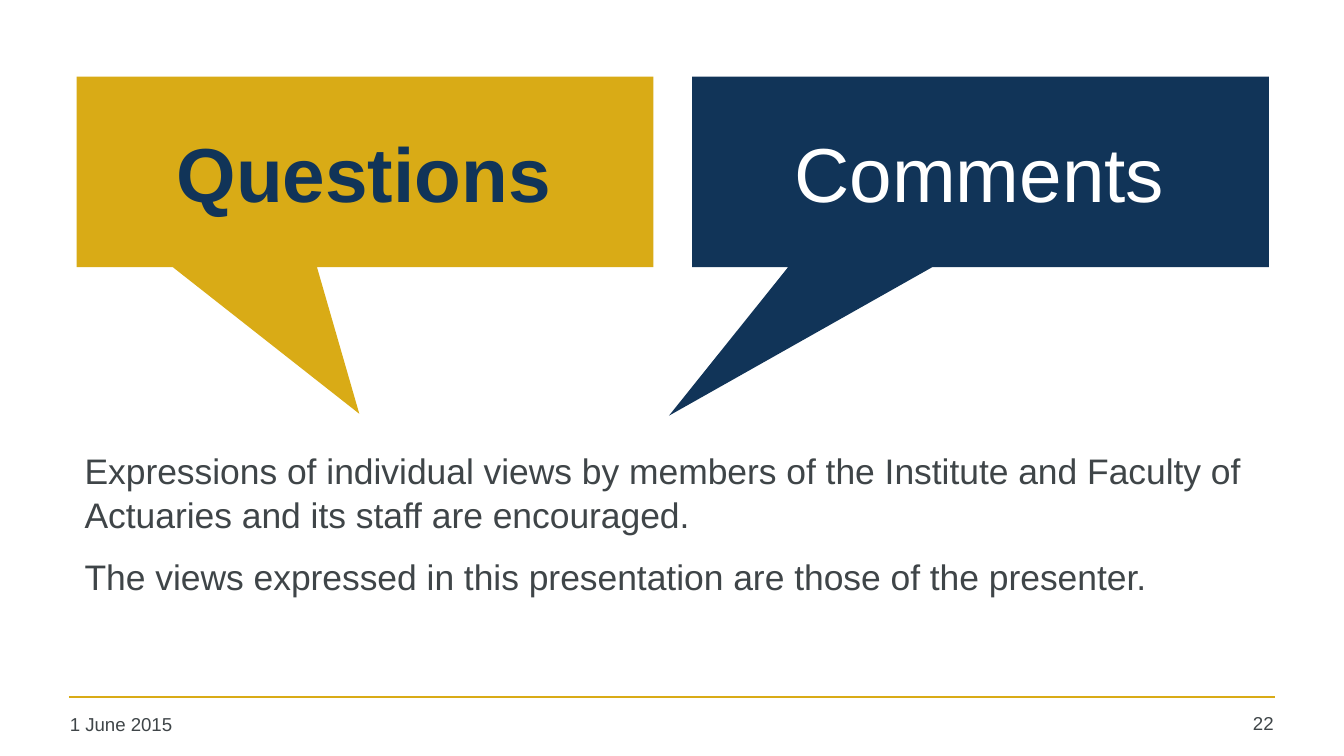
from lxml import etree
from pptx import Presentation
from pptx import util as u
from pptx.dml.color import RGBColor
from pptx.enum import shapes, text
from pptx.oxml import ns

HUES = {"gold": "D9AB16", "navy": "113458", "grey": "3F4548", "white": "FFFFFF"}


def hue(name):
    return RGBColor.from_string(HUES[name])


def write(box, lines, size, color, align=text.PP_ALIGN.LEFT, bold=False):
    """Put one paragraph per line into a text box and format it."""
    frame = box.text_frame
    frame.word_wrap = True
    frame.margin_left = frame.margin_right = u.Cm(0.23)
    frame.margin_top = frame.margin_bottom = u.Cm(0.11)
    frame.text = "\n".join(lines)
    for par in frame.paragraphs:
        par.alignment = align
        for run in par.runs:
            run.font.name = "Arial"
            run.font.size = u.Pt(size)
            run.font.bold = bold
            run.font.color.rgb = hue(color)
    return frame


deck = Presentation()
deck.slide_width, deck.slide_height = u.Cm(25.4), u.Cm(14.29)
slide = deck.slides.add_slide(deck.slide_layouts[6])
items = slide.shapes

# Footer
rule = items.add_connector(shapes.MSO_CONNECTOR.STRAIGHT,
                           u.Cm(1.3), u.Cm(13.18), u.Cm(24.1), u.Cm(13.18))
rule.line.color.rgb = hue("gold")
rule.line.width = u.Pt(1)
etree.SubElement(rule._element.spPr, ns.qn("a:effectLst"))

date = items.add_textbox(u.Cm(1.09), u.Cm(13.36), u.Cm(5.6), u.Cm(0.7))
write(date, ["1 June 2015"], 10, "grey")
page = items.add_textbox(u.Cm(22.5), u.Cm(13.34), u.Cm(1.8), u.Cm(0.7))
write(page, ["22"], 10, "grey", text.PP_ALIGN.RIGHT)

# Disclaimer
body = items.add_textbox(u.Cm(1.37), u.Cm(8.33), u.Cm(23.34), u.Cm(4.9))
frame = write(body, [
    "Expressions of individual views by members of the Institute and Faculty "
    "of Actuaries and its staff are encouraged.",
    "The views expressed in this presentation are those of the presenter.",
], 19, "grey")
for par in frame.paragraphs:
    par.line_spacing = 1.05
frame.paragraphs[1].space_before = u.Pt(9)

# Speech bubbles: word, fill, text colour, bold, tail tip
bubbles = [
    ("Questions", "gold", "navy", True, (-0.01, 1.27)),
    ("Comments", "navy", "white", False, (-0.54, 1.28)),
]
for col, (word, fill, ink, bold, tip) in enumerate(bubbles):
    left = 1.45 + col * 11.63
    bubble = items.add_shape(shapes.MSO_SHAPE.RECTANGULAR_CALLOUT,
                             u.Cm(left), u.Cm(1.45), u.Cm(10.9), u.Cm(3.6))
    bubble.adjustments[0], bubble.adjustments[1] = tip
    bubble.shadow.inherit = False
    bubble.fill.solid()
    bubble.fill.fore_color.rgb = hue(fill)
    bubble.line.fill.background()

    label = items.add_textbox(u.Cm(left + 0.54), u.Cm(2.05), u.Cm(9.78), u.Cm(2.4))
    frame = write(label, [word], 41, ink, text.PP_ALIGN.CENTER, bold)
    frame.vertical_anchor = text.MSO_ANCHOR.MIDDLE

deck.save("out.pptx")
